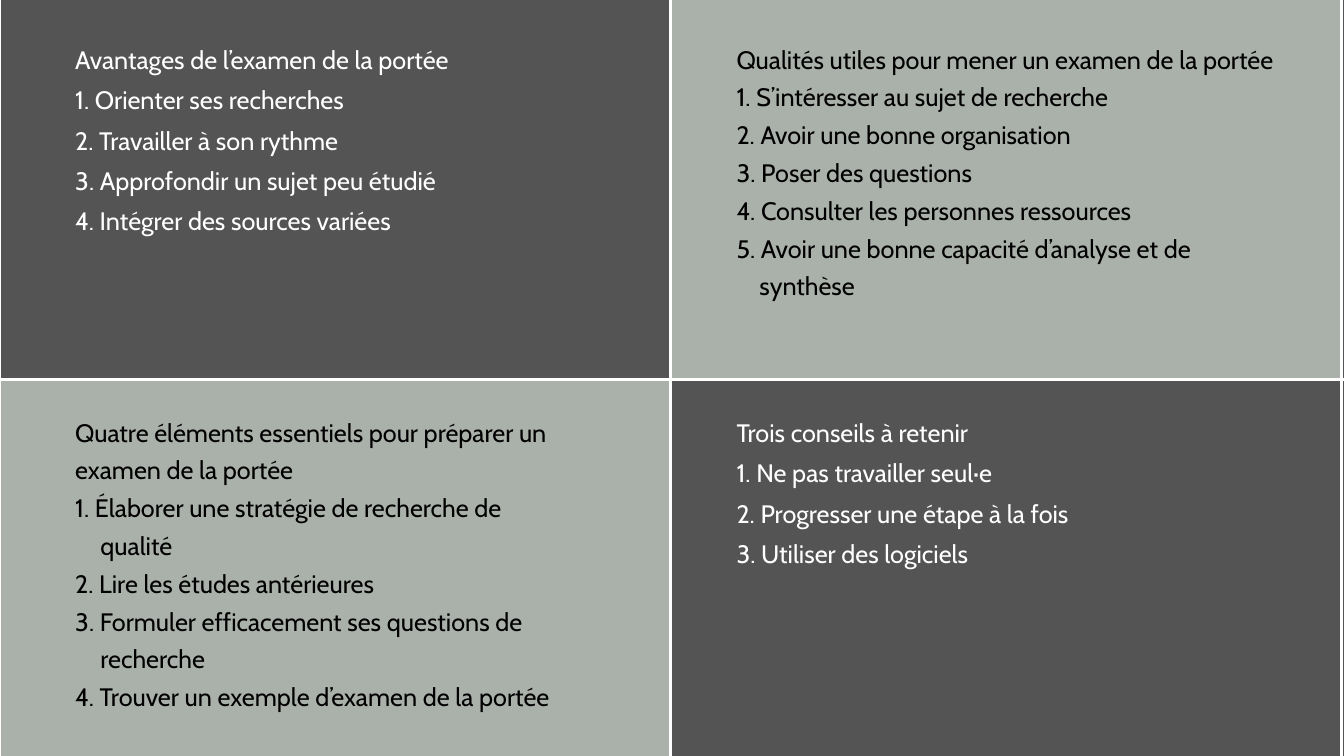
from dataclasses import dataclass

from lxml import etree
from pptx import Presentation
from pptx.dml.color import RGBColor
from pptx.enum.shapes import MSO_CONNECTOR, MSO_SHAPE
from pptx.enum.text import MSO_AUTO_SIZE
from pptx.oxml.ns import qn
from pptx.util import Pt

RECTANGLE = MSO_SHAPE.RECTANGLE
STRAIGHT = MSO_CONNECTOR.STRAIGHT
FIT_SHAPE = MSO_AUTO_SIZE.SHAPE_TO_FIT_TEXT


@dataclass(frozen=True)
class Theme:
    dark = RGBColor(0x54, 0x54, 0x54)
    sage = RGBColor(0xAA, 0xB1, 0xAB)
    white = RGBColor(0xFF, 0xFF, 0xFF)
    black = RGBColor(0x00, 0x00, 0x00)
    font = "Cabin"
    size = Pt(27)
    rule = Pt(3)


@dataclass(frozen=True)
class Style:
    fill: RGBColor
    ink: RGBColor
    leading: float
    drop: float


THEME = Theme()
DARK = Style(THEME.dark, THEME.white, 43.2, 0)
LIGHT = Style(THEME.sage, THEME.black, 40.5, 2.2)

SLIDE_W, SLIDE_H = 1440, 810
PANEL_W, PANEL_H = 718.6, 414
PANEL_TOP = -7.2
MIDDLE = PANEL_TOP + PANEL_H
COLUMN_INSETS = (80.6, 70.5)
ROW_INSETS = (43.9, 29.5)

PANELS = [
    (0, 0, DARK, 577.4, 0, "Avantages de l’examen de la portée", [
        "Orienter ses recherches",
        "Travailler à son rythme",
        "Approfondir un sujet peu étudié",
        "Intégrer des sources variées",
    ]),
    (0, 1, LIGHT, 600.4, 27, "Quatre éléments essentiels pour préparer un examen de la portée", [
        "Élaborer une stratégie de recherche de\vqualité",
        "Lire les études antérieures",
        "Formuler efficacement ses questions de\vrecherche",
        "Trouver un exemple d’examen de la portée",
    ]),
    (1, 0, LIGHT, 596.2, 24.5, "Qualités utiles pour mener un examen de la portée", [
        "S’intéresser au sujet de recherche",
        "Avoir une bonne organisation",
        "Poser des questions",
        "Consulter les personnes ressources",
        "Avoir une bonne capacité d’analyse et de\vsynthèse",
    ]),
    (1, 1, DARK, 577.4, 0, "Trois conseils à retenir", [
        "Ne pas travailler seul·e",
        "Progresser une étape à la fois",
        "Utiliser des logiciels",
    ]),
]


def add_divider(s, x1, y1, x2, y2):
    line = s.shapes.add_connector(STRAIGHT, Pt(x1), Pt(y1), Pt(x2), Pt(y2))
    line.line.color.rgb = THEME.white
    line.line.width = THEME.rule
    etree.SubElement(line._element.spPr, qn("a:effectLst"))


def add_panel(s, x, y, w, h, style):
    sp = s.shapes.add_shape(RECTANGLE, Pt(x), Pt(y), Pt(w), Pt(h))
    sp.shadow.inherit = False
    sp.fill.solid()
    sp.fill.fore_color.rgb = style.fill
    sp.line.color.rgb = THEME.white
    sp.line.width = THEME.rule


def add_list(s, x, y, w, style, hang, title, items):
    lines = [title] + [f"{n}. {item}" for n, item in enumerate(items, 1)]
    height = style.leading * (len(lines) + sum("\v" in line for line in lines))
    sp = s.shapes.add_textbox(Pt(x), Pt(y), Pt(w), Pt(height))
    tf = sp.text_frame
    tf.word_wrap = True
    tf.auto_size = FIT_SHAPE
    tf.margin_left = tf.margin_top = tf.margin_right = tf.margin_bottom = 0
    tf.text = "\n".join(lines)
    for p, line in zip(tf.paragraphs, lines):
        p.line_spacing = Pt(style.leading)
        if "\v" in line:
            pPr = p._p.get_or_add_pPr()
            pPr.set("marL", str(Pt(hang)))
            pPr.set("indent", str(-Pt(hang)))
        for r in p.runs:
            r.font.name = THEME.font
            r.font.size = THEME.size
            r.font.color.rgb = style.ink


def main():
    prs = Presentation()
    prs.slide_width, prs.slide_height = Pt(SLIDE_W), Pt(SLIDE_H)
    s = prs.slides.add_slide(prs.slide_layouts[6])
    s.background.fill.solid()
    s.background.fill.fore_color.rgb = THEME.dark

    add_divider(s, 0, MIDDLE, SLIDE_W, MIDDLE)
    add_divider(s, PANEL_W, 0, PANEL_W, SLIDE_H)
    for col, row, style, width, hang, title, items in PANELS:
        x, y = col * PANEL_W, PANEL_TOP + row * PANEL_H
        add_panel(s, x, y, PANEL_W, PANEL_H, style)
        add_list(s, x + COLUMN_INSETS[col], y + ROW_INSETS[row] + style.drop,
                 width, style, hang, title, items)

    prs.save("out.pptx")


if __name__ == "__main__":
    main()
